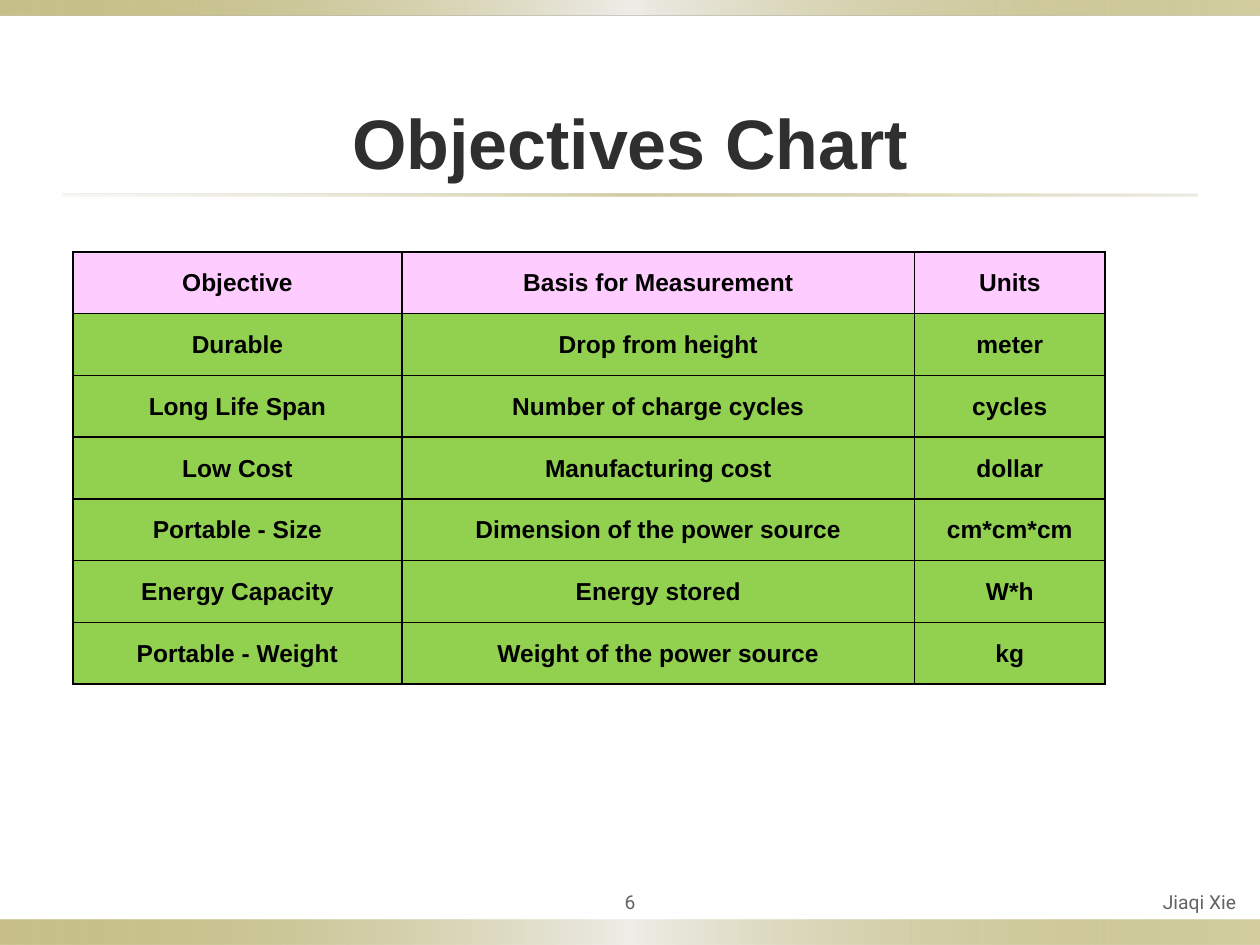
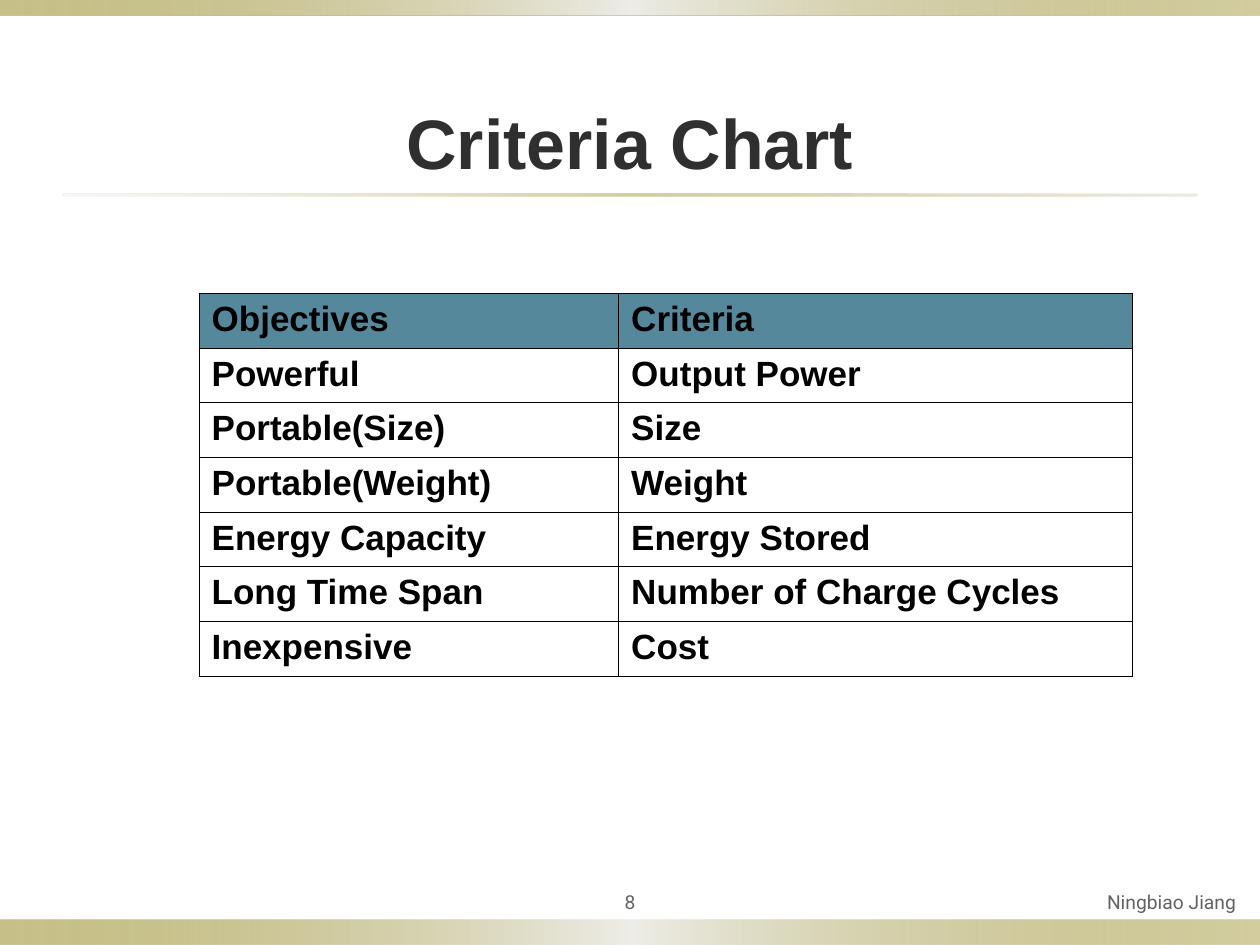
from dataclasses import dataclass

from pptx import Presentation
from pptx.dml.color import RGBColor
from pptx.enum.shapes import MSO_SHAPE
from pptx.enum.text import MSO_ANCHOR, MSO_AUTO_SIZE, PP_ALIGN
from pptx.oxml import parse_xml
from pptx.oxml.ns import nsdecls, qn
from pptx.util import Inches, Pt


@dataclass(frozen=True)
class Theme:
    title_color: str = "2F2F2F"
    footer_color: str = "636363"
    black: str = "000000"
    white: str = "FFFFFF"
    pink: str = "FFCCFF"
    green: str = "92D050"
    teal: str = "55889B"
    # Gradient stops: position %, colour, opacity %
    band: tuple = ((0, "918415", 50), (50, "EEEDE8", 100), (100, "918415", 40))
    rule: tuple = ((0, "DCD9CC", 20), (50, "918415", 40), (100, "DCD9CC", 50))
    font: str = "Arial"
    footer_font: str = "Roboto"
    title_size: int = 40
    footer_size: int = 11


def write(tf, text, *, size, color, font, bold=False, align=PP_ALIGN.LEFT):
    p = tf.paragraphs[0]
    p.alignment = align
    r = p.add_run()
    r.text = text
    r.font.size = Pt(size)
    r.font.name = font
    r.font.bold = bold
    r.font.color.rgb = RGBColor.from_string(color)


def set_margins(target, left, top, right, bottom):
    target.margin_left, target.margin_top = Inches(left), Inches(top)
    target.margin_right, target.margin_bottom = Inches(right), Inches(bottom)


def set_borders(cell, color, width):
    tc_pr = cell._tc.get_or_add_tcPr()
    for i, side in enumerate("LRTB"):
        tc_pr.insert(i, parse_xml(
            f'<a:ln{side} {nsdecls("a")} w="{Pt(width)}"><a:solidFill>'
            f'<a:srgbClr val="{color}"/></a:solidFill></a:ln{side}>'))


class Deck:
    def __init__(self, theme):
        self.theme = theme
        self.prs = Presentation()
        self.prs.slide_width, self.prs.slide_height = Inches(10), Inches(7.5)
        self.s = None

    def add_slide(self, title, number, author):
        t = self.theme
        self.s = self.prs.slides.add_slide(self.prs.slide_layouts[5])
        self.gradient_bar(0, 7.3, 10, 0.2, t.band)
        self.gradient_bar(0, 0, 10, 0.12, t.band)
        self.gradient_bar(0.5, 1.54, 9, 0.02, t.rule)
        self.title(title)
        self.footer(5.83, 4.08, author, PP_ALIGN.RIGHT)
        self.footer(4.5, 1, number, PP_ALIGN.CENTER)

    def gradient_bar(self, x, y, w, h, stops):
        sp = self.s.shapes.add_shape(
            MSO_SHAPE.RECTANGLE, Inches(x), Inches(y), Inches(w), Inches(h))
        sp.shadow.inherit = False
        sp.line.fill.background()
        sp.fill.background()
        gs = "".join(
            f'<a:gs pos="{pos * 1000}"><a:srgbClr val="{color}">'
            f'<a:alpha val="{alpha * 1000}"/></a:srgbClr></a:gs>'
            for pos, color, alpha in stops)
        sp_pr = sp._element.spPr
        sp_pr.replace(sp_pr.find(qn("a:noFill")), parse_xml(
            f'<a:gradFill {nsdecls("a")} rotWithShape="1"><a:gsLst>{gs}</a:gsLst>'
            '<a:lin ang="0" scaled="0"/></a:gradFill>'))

    def title(self, text):
        t = self.theme
        sp = self.s.shapes.title
        sp.left, sp.top = Inches(0.5), Inches(0.68)
        sp.width, sp.height = Inches(9), Inches(0.88)
        tf = sp.text_frame
        tf.auto_size = MSO_AUTO_SIZE.NONE
        tf.vertical_anchor = MSO_ANCHOR.BOTTOM
        set_margins(tf, 0.1, 0.1, 0.1, 0.1)
        write(tf, text, size=t.title_size, color=t.title_color, font=t.font,
              bold=True, align=PP_ALIGN.CENTER)

    def footer(self, x, w, text, align):
        t = self.theme
        sp = self.s.shapes.add_textbox(Inches(x), Inches(7), Inches(w), Inches(0.31))
        tf = sp.text_frame
        tf.word_wrap = True
        tf.vertical_anchor = MSO_ANCHOR.MIDDLE
        write(tf, text, size=t.footer_size, color=t.footer_color,
              font=t.footer_font, align=align)

    def table(self, x, y, col_widths, row_height, rows, *, size, head_fill,
              body_fill, border, align=PP_ALIGN.LEFT, anchor=MSO_ANCHOR.TOP,
              margins=(0.1, 0.05, 0.1, 0.05)):
        t = self.theme
        table = self.s.shapes.add_table(
            len(rows), len(col_widths), Inches(x), Inches(y),
            Inches(sum(col_widths)), Inches(row_height * len(rows))).table
        table.first_row = table.horz_banding = False
        for col, width in zip(table.columns, col_widths):
            col.width = Inches(width)
        for i, values in enumerate(rows):
            table.rows[i].height = Inches(row_height)
            for j, text in enumerate(values):
                cell = table.cell(i, j)
                cell.fill.solid()
                cell.fill.fore_color.rgb = RGBColor.from_string(
                    body_fill if i else head_fill)
                cell.vertical_anchor = anchor
                set_margins(cell, *margins)
                set_borders(cell, t.black, border)
                write(cell.text_frame, text, size=size, color=t.black,
                      font=t.font, bold=True, align=align)


OBJECTIVES = [
    ("Objective", "Basis for Measurement", "Units"),
    ("Durable", "Drop from height", "meter"),
    ("Long Life Span", "Number of charge cycles", "cycles"),
    ("Low Cost", "Manufacturing cost", "dollar"),
    ("Portable - Size", "Dimension of the power source", "cm*cm*cm"),
    ("Energy Capacity", "Energy stored", "W*h"),
    ("Portable - Weight", "Weight of the power source", "kg"),
]

CRITERIA = [
    ("Objectives", "Criteria"),
    ("Powerful", "Output Power"),
    ("Portable(Size)", "Size"),
    ("Portable(Weight)", "Weight"),
    ("Energy Capacity", "Energy Stored"),
    ("Long Time Span", "Number of Charge Cycles"),
    ("Inexpensive", "Cost"),
]


def main():
    theme = Theme()
    deck = Deck(theme)

    deck.add_slide("Objectives Chart", "6", "Jiaqi Xie")
    deck.table(0.58, 2, (2.61, 4.07, 1.51), 0.49, OBJECTIVES, size=14,
               head_fill=theme.pink, body_fill=theme.green, border=1,
               align=PP_ALIGN.CENTER, anchor=MSO_ANCHOR.MIDDLE,
               margins=(0.01, 0.01, 0.01, 0))

    deck.add_slide("Criteria Chart", "8", "Ningbiao Jiang")
    deck.table(1.58, 2.33, (3.33, 4.08), 0.43, CRITERIA, size=20,
               head_fill=theme.teal, body_fill=theme.white, border=0.75)

    deck.prs.save("out.pptx")


if __name__ == "__main__":
    main()
